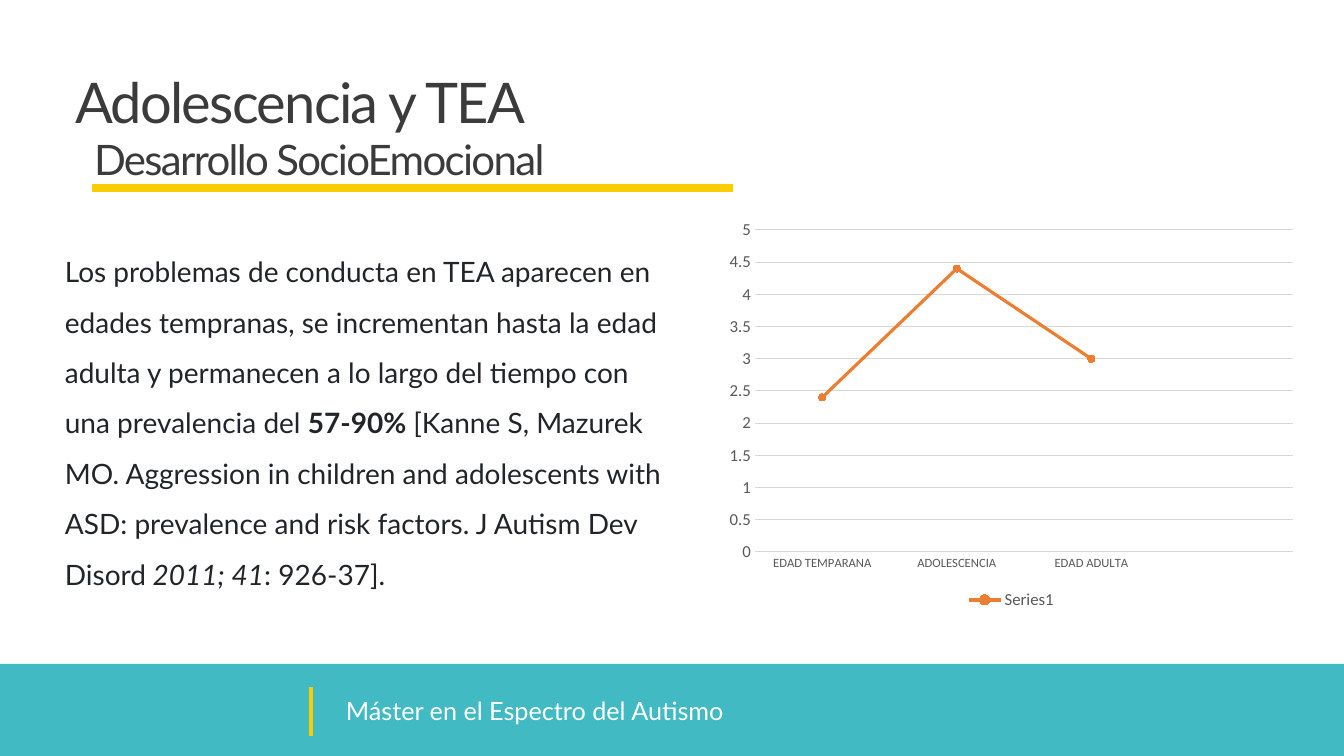
from lxml.etree import SubElement
from pptx import Presentation
from pptx.chart.data import CategoryChartData
from pptx.dml.color import RGBColor
from pptx.enum.chart import XL_CHART_TYPE, XL_LEGEND_POSITION, XL_MARKER_STYLE, XL_TICK_MARK
from pptx.enum.shapes import MSO_CONNECTOR, MSO_SHAPE
from pptx.enum.text import MSO_ANCHOR, MSO_AUTO_SIZE
from pptx.oxml.ns import qn
from pptx.util import Pt

COLORS = {
    "teal": "42BAC3", "yellow": "FACD03", "white": "FFFFFF", "title": "3B3B3B",
    "body": "212529", "orange": "ED7D31", "grid": "D9D9D9", "label": "595959",
}
TEXT_FONT = "Lato"
CHART_FONT = "Calibri"

# text, size, box in px
HEADINGS = [
    ("Adolescencia y TEA", 40, (75, 67, 1004, 68)),
    ("Desarrollo SocioEmocional", 30, (94, 133, 715, 51)),
]
FOOTER = "Máster en el Espectro del Autismo"
BODY = [
    ("Los problemas de conducta en TEA aparecen en edades tempranas, se incrementan "
     "hasta la edad adulta y permanecen a lo largo del tiempo con una prevalencia del ", ""),
    ("57-90% ", "bold"),
    ("[Kanne S, Mazurek MO. Aggression in children and adolescents with ASD: "
     "prevalence and risk factors. J Autism Dev Disord", ""),
    (" 2011; 41", "italic"),
    (": 926-37].", ""),
]
SERIES_NAME = "Series1"
CHART_POINTS = [("EDAD TEMPARANA", 2.4), ("ADOLESCENCIA", 4.4), ("EDAD ADULTA", 3), ("", None)]

SLIDE_SIZE = (1344, 756)
FOOTER_BAND = (0, 664, 1344, 92)
FOOTER_BOX = (336, 690, 403, 40)
BODY_BOX = (55, 233, 626, 360)
CHART_BOX = (718, 212, 587, 402)
RULES = [((311, 687), (311, 736), 3), ((92, 188), (733, 188), 6)]
EMU_PER_PX = 914400 / 100.8


def px(*lengths):
    return [round(length * EMU_PER_PX) for length in lengths]


def color(name):
    return RGBColor.from_string(COLORS[name])


def add_rule(slide, start, end, width):
    rule = slide.shapes.add_connector(MSO_CONNECTOR.STRAIGHT, *px(*start, *end))
    rule.line.color.rgb = color("yellow")
    rule.line.width = Pt(width)
    SubElement(rule._element.spPr, qn("a:effectLst"))


def add_text(slide, box, wrap=True, anchor=MSO_ANCHOR.TOP):
    """Add an empty text box and return its frame."""
    frame = slide.shapes.add_textbox(*px(*box)).text_frame
    frame.word_wrap = wrap
    frame.auto_size = MSO_AUTO_SIZE.SHAPE_TO_FIT_TEXT
    frame.vertical_anchor = anchor
    return frame


def add_run(paragraph, text, size, color_name):
    run = paragraph.add_run()
    run.text = text
    run.font.name = TEXT_FONT
    run.font.size = Pt(size)
    run.font.color.rgb = color(color_name)
    return run


def add_heading(slide, text, size, box):
    frame = add_text(slide, box, anchor=MSO_ANCHOR.BOTTOM)
    frame.margin_left = frame.margin_right = frame.margin_bottom = 0
    frame.margin_top = px(1)[0]
    run = add_run(frame.paragraphs[0], text, size, "title")
    run.font._element.set("spc", "-120")


def style_font(font, size):
    font.name = CHART_FONT
    font.size = Pt(size)
    font.bold = False
    font.color.rgb = color("label")


def style_line(line, color_name, width):
    line.color.rgb = color(color_name)
    line.width = Pt(width)


def add_line_chart(slide):
    data = CategoryChartData()
    data.categories = [category for category, _ in CHART_POINTS]
    data.add_series(SERIES_NAME, [value for _, value in CHART_POINTS])
    chart = slide.shapes.add_chart(XL_CHART_TYPE.LINE_MARKERS, *px(*CHART_BOX), data).chart
    chart.has_title = False
    style_font(chart.font, 10)
    chart.plots[0].vary_by_categories = False

    chart.has_legend = True
    chart.legend.position = XL_LEGEND_POSITION.BOTTOM
    chart.legend.include_in_layout = False
    style_font(chart.legend.font, 12)

    for axis, size in ((chart.category_axis, 9), (chart.value_axis, 12)):
        axis.major_tick_mark = axis.minor_tick_mark = XL_TICK_MARK.NONE
        style_font(axis.tick_labels.font, size)
    style_line(chart.category_axis.format.line, "grid", 0.75)
    value_axis = chart.value_axis
    value_axis.minimum_scale, value_axis.maximum_scale, value_axis.major_unit = 0, 5, 0.5
    value_axis.format.line.fill.background()
    style_line(value_axis.major_gridlines.format.line, "grid", 0.75)

    series = chart.plots[0].series[0]
    series.smooth = False
    style_line(series.format.line, "orange", 2.25)
    series.marker.style = XL_MARKER_STYLE.CIRCLE
    series.marker.size = 5
    series.marker.format.fill.solid()
    series.marker.format.fill.fore_color.rgb = color("orange")
    style_line(series.marker.format.line, "orange", 0.75)


def main():
    presentation = Presentation()
    presentation.slide_width, presentation.slide_height = px(*SLIDE_SIZE)
    slide = presentation.slides.add_slide(presentation.slide_layouts[6])

    band = slide.shapes.add_shape(MSO_SHAPE.RECTANGLE, *px(*FOOTER_BAND))
    band.shadow.inherit = False
    band.fill.solid()
    band.fill.fore_color.rgb = color("teal")
    band.line.fill.background()
    for start, end, width in RULES:
        add_rule(slide, start, end, width)
    footer = add_text(slide, FOOTER_BOX, wrap=False, anchor=MSO_ANCHOR.MIDDLE)
    add_run(footer.paragraphs[0], FOOTER, 18, "white")

    paragraph = add_text(slide, BODY_BOX).paragraphs[0]
    paragraph.line_spacing = 1.5
    for text, style in BODY:
        run = add_run(paragraph, text, 20, "body")
        run.font.bold = style == "bold"
        run.font.italic = style == "italic"

    add_line_chart(slide)
    for text, size, box in HEADINGS:
        add_heading(slide, text, size, box)
    presentation.save("out.pptx")


if __name__ == "__main__":
    main()
